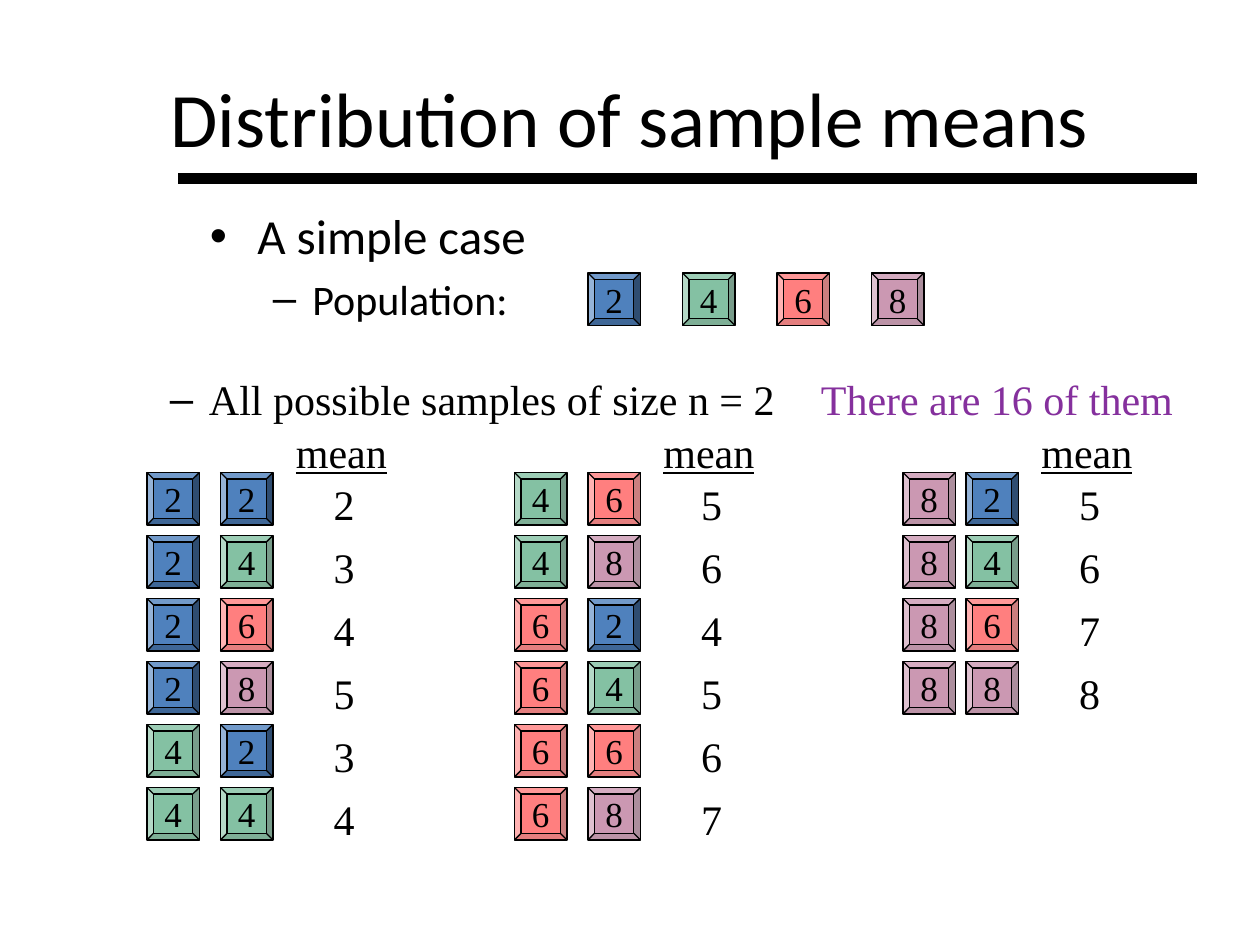
from itertools import product

from lxml.etree import SubElement
from pptx import Presentation
from pptx.dml.color import RGBColor
from pptx.enum.shapes import MSO_CONNECTOR, MSO_SHAPE
from pptx.enum.text import MSO_ANCHOR, MSO_AUTO_SIZE, PP_ALIGN
from pptx.oxml.ns import qn
from pptx.util import Inches, Pt

COLORS = {"black": "000000", "purple": "85309D",
          2: "4F81BD", 4: "339966", 6: "FF0000", 8: "993366"}
OPACITY = {4: 60, 6: 50, 8: 50}  # percent; other tiles are solid
POPULATION = (2, 4, 6, 8)
SERIF, SANS, BULLET_FONT = "Times New Roman", "Calibri", "Arial"

CELL = Inches(1) // 12  # the grid has 12 cells to the inch
TILE, ROW_STEP, ROWS = 5, 6, 6
SAMPLE_TOP = 45
# left edge of each column, and distance from its first tile to its second
SAMPLE_COLUMNS = ((14, 7), (49, 7), (86, 6))


def grid(*cells):
    return [round(c * CELL) for c in cells]


def rgb(name):
    return RGBColor.from_string(COLORS[name])


def write(p, text, size, font=SERIF, color="black", **formats):
    r = p.add_run()
    r.text = text
    r.font.color.rgb = rgb(color)
    for name, value in {"size": Pt(size), "name": font, **formats}.items():
        setattr(r.font, name, value)


def indent(p, left, hanging, bullet=None):
    """Give a text box paragraph a hanging indent and list spacing."""
    pPr = p._p.get_or_add_pPr()
    pPr.set("marL", str(Inches(left)))
    pPr.set("indent", str(-Inches(hanging)))
    SubElement(SubElement(pPr, qn("a:spcBef")), qn("a:spcPct")).set("val", "20000")
    if bullet:
        SubElement(pPr, qn("a:buFont")).set("typeface", BULLET_FONT)
        SubElement(pPr, qn("a:buChar")).set("char", bullet)


def add_label(s, box, text, wrap=False, **formats):
    tf = s.shapes.add_textbox(*grid(*box)).text_frame
    tf.word_wrap = wrap
    if not wrap:
        tf.auto_size = MSO_AUTO_SIZE.SHAPE_TO_FIT_TEXT
    p = tf.paragraphs[0]
    write(p, text, 24, **formats)
    return p


def add_tile(s, x, y, value):
    sp = s.shapes.add_shape(MSO_SHAPE.BEVEL, *grid(x, y, TILE, TILE))
    sp.shadow.inherit = False
    sp.fill.solid()
    sp.fill.fore_color.rgb = rgb(value)
    if value in OPACITY:
        color = sp._element.spPr.find(qn("a:solidFill"))[0]
        SubElement(color, qn("a:alpha")).set("val", str(OPACITY[value] * 1000))
    sp.line.color.rgb = rgb("black")
    sp.line.width = Pt(0.75)
    tf = sp.text_frame
    tf.word_wrap = False
    tf.vertical_anchor = MSO_ANCHOR.MIDDLE
    p = tf.paragraphs[0]
    p.alignment = PP_ALIGN.CENTER
    write(p, str(value), 20)


def place(sp, box):
    for name, value in zip(("left", "top", "width", "height"), grid(*box)):
        setattr(sp, name, value)


def add_heading(s, box):
    place(s.shapes.title, box)
    tf = s.shapes.title.text_frame
    tf.vertical_anchor = MSO_ANCHOR.MIDDLE
    p = tf.paragraphs[0]
    p.alignment = PP_ALIGN.CENTER
    write(p, "Distribution of sample means", 44, SANS)


def add_rule(s, x1, x2, y):
    line = s.shapes.add_connector(MSO_CONNECTOR.STRAIGHT, *grid(x1, y, x2, y))
    line.line.color.rgb = rgb("black")
    line.line.width = Pt(6)
    SubElement(line._element.spPr, qn("a:effectLst"))


def add_population(s, box, tiles_left, step):
    body = s.placeholders[1]
    place(body, box)
    tf = body.text_frame
    write(tf.paragraphs[0], "A simple case", 28, SANS)
    p = tf.add_paragraph()
    p.level = 1
    write(p, "Population:", 24, SANS)
    for i, value in enumerate(POPULATION):
        add_tile(s, tiles_left + i * step, box[1] + 7, value)


def add_sample_heading(s, top):
    p = add_label(s, (9, top, 81, 6), "All possible samples of size n = 2", wrap=True)
    p.level = 1
    indent(p, 0.81, 0.31, "–")
    p = add_label(s, (77, top, 38, 6), "There are 16 of them", wrap=True, color="purple")
    indent(p, 0.38, 0.38)


def add_sample_column(s, left, top, gap, samples):
    """Draw pairs of tiles with the mean of each pair beside them."""
    mean_left = left + gap + 6
    add_label(s, (mean_left, top - 5, 11.2, 6), "mean", underline=True)
    for row, (first, second) in enumerate(samples):
        y = top + row * ROW_STEP
        add_tile(s, left, y, first)
        add_tile(s, left + gap, y, second)
        add_label(s, (mean_left + 3.6, y, 4.4, 6), str((first + second) // 2))


def main():
    prs = Presentation()
    prs.slide_width, prs.slide_height = Inches(10), Inches(7.5)
    s = prs.slides.add_slide(prs.slide_layouts[1])
    add_rule(s, 17, 114, 17)
    add_heading(s, (6, 3.6, 108, 15))
    add_population(s, (18.8, 19, 43, 17.4), tiles_left=56, step=9)
    add_sample_heading(s, 35)
    samples = list(product(POPULATION, repeat=2))
    for i, (left, gap) in enumerate(SAMPLE_COLUMNS):
        add_sample_column(s, left, SAMPLE_TOP, gap, samples[i * ROWS:(i + 1) * ROWS])
    prs.save("out.pptx")


if __name__ == "__main__":
    main()
